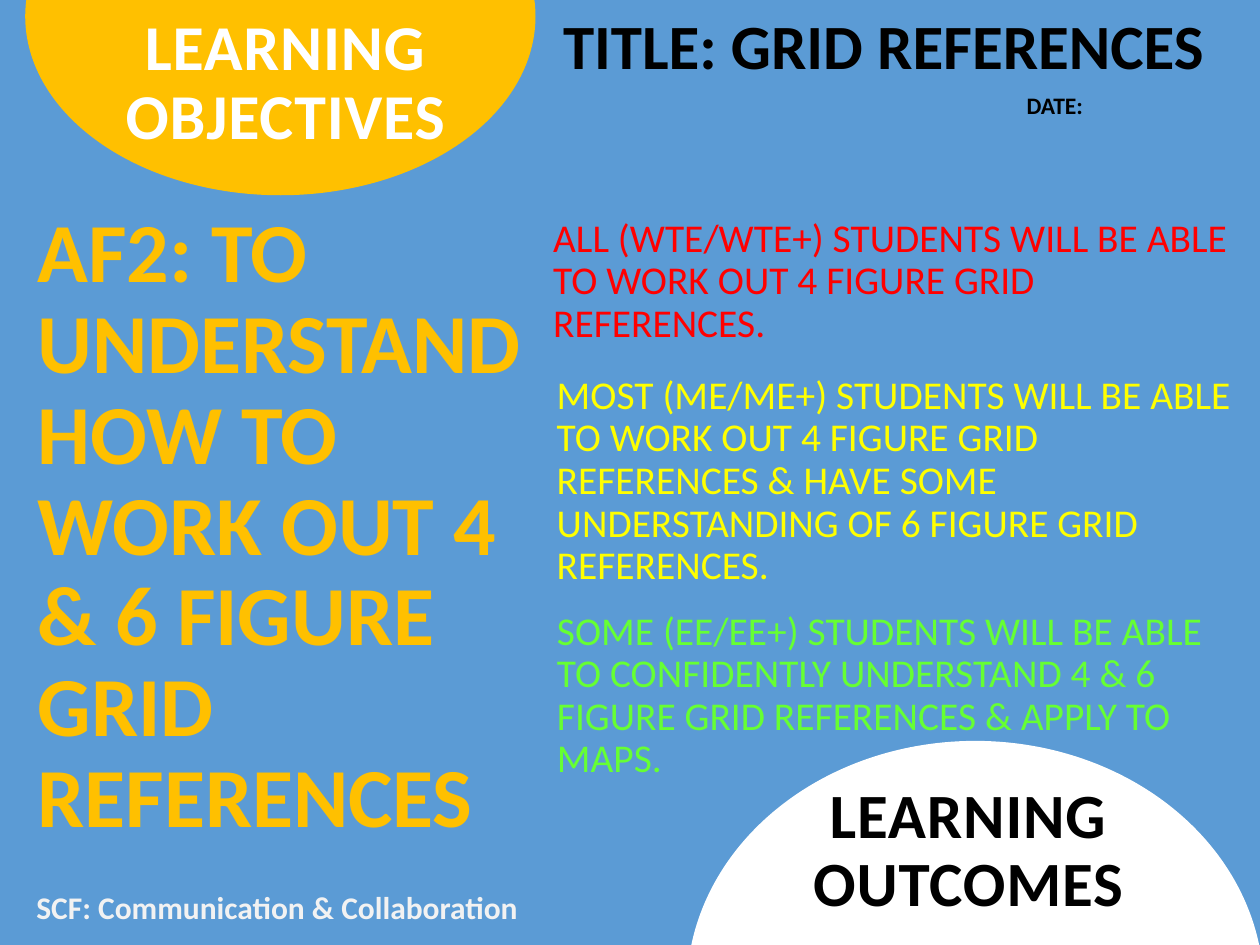
from pptx import Presentation
from pptx.dml.color import RGBColor
from pptx.enum.shapes import MSO_SHAPE as Shape
from pptx.enum.text import MSO_ANCHOR as Anchor, MSO_AUTO_SIZE as AutoSize, PP_ALIGN as Align
from pptx.util import Inches, Pt

COLOURS = {
    "sky": "5B9BD5", "gold": "FFC000", "white": "FFFFFF", "black": "000000",
    "red": "FF0000", "yellow": "FFFF00", "green": "66FF33", "pale": "F2F2F2",
}
FONT = "Calibri"
WIDTH, HEIGHT = Inches(10), Inches(7.5)
PLAIN_INSETS = (0.1, 0.05, 0.1, 0.05)
SLIM_INSETS = (0.07, 0.04, 0.07, 0.04)

HEADING = "LEARNING OBJECTIVES"
HEADING_AREA = (5.9, -4.53, 33.5, 21.47)
OVALS = [
    ("gold", (2, -17.2, 40.5, 37.87)),
    ("white", (54.5, 78.4, 45.8, 52.53)),
]
OBJECTIVE = (
    "AF2: TO UNDERSTAND HOW TO WORK OUT 4 & 6 FIGURE GRID REFERENCES",
    (2, 21.6, 41.3, 69.2),
)
OUTCOMES = [
    ("ALL (WTE/WTE+) STUDENTS WILL BE ABLE TO WORK OUT 4 FIGURE GRID REFERENCES.",
     "red", (43.2, 22.53, 56.8, 11.07), SLIM_INSETS),
    ("MOST (ME/ME+) STUDENTS WILL BE ABLE TO WORK OUT 4 FIGURE GRID REFERENCES "
     "& HAVE SOME UNDERSTANDING OF 6 FIGURE GRID REFERENCES.",
     "yellow", (43.2, 39.07, 56.8, 19.33), PLAIN_INSETS),
    ("SOME (EE/EE+) STUDENTS WILL BE ABLE TO CONFIDENTLY UNDERSTAND 4 & 6 "
     "FIGURE GRID REFERENCES & APPLY TO MAPS.",
     "green", (43.5, 64.13, 56.8, 13.2), SLIM_INSETS),
]
OUTCOMES_HEADING = ("LEARNING OUTCOMES", (58.7, 78.4, 36.3, 19.73))
LABELS = [
    ("TITLE: GRID REFERENCES", 36, "black", (43.7, 0, 60.2, 9.47)),
    ("DATE:", 13.5, "black", (80.5, 8.93, 23.4, 4.4)),
    ("SCF: Communication & Collaboration", 18, "pale", (1.9, 93.33, 56.8, 5.33)),
]


def colour(name):
    return RGBColor.from_string(COLOURS[name])


def place(area):
    sides = (WIDTH, HEIGHT, WIDTH, HEIGHT)
    return [round(side * share / 100) for side, share in zip(sides, area)]


def write(box, text, *, size, tint, bold=False, align=Align.LEFT,
          line=1.0, insets=PLAIN_INSETS, tracking=0):
    frame = box.text_frame
    frame.auto_size = AutoSize.NONE
    frame.word_wrap = True
    frame.vertical_anchor = Anchor.TOP
    frame.margin_left, frame.margin_top, frame.margin_right, frame.margin_bottom = map(Inches, insets)
    para = frame.paragraphs[0]
    para.alignment = align
    para.line_spacing = line
    para.space_before = Pt(0)
    span = para.add_run()
    span.text = text
    span.font.name = FONT
    span.font.size = Pt(size)
    span.font.bold = bold
    span.font.color.rgb = colour(tint)
    if tracking:
        span.font._element.set("spc", str(round(tracking * 100)))


def add_text(page, text, area, **style):
    write(page.shapes.add_textbox(*place(area)), text, **style)


def add_oval(page, tint, area):
    oval = page.shapes.add_shape(Shape.OVAL, *place(area))
    oval.shadow.inherit = False
    oval.fill.solid()
    oval.fill.fore_color.rgb = colour(tint)
    oval.line.fill.background()


def main():
    deck = Presentation()
    deck.slide_width, deck.slide_height = WIDTH, HEIGHT
    page = deck.slides.add_slide(deck.slide_layouts[5])
    page.background.fill.solid()
    page.background.fill.fore_color.rgb = colour("sky")

    text, area = OBJECTIVE
    add_text(page, text, area, size=48, tint="gold", bold=True, line=0.9)
    for text, tint, area, insets in OUTCOMES:
        add_text(page, text, area, size=22.5, tint=tint, line=0.9, insets=insets)
    for tint, area in OVALS:
        add_oval(page, tint, area)

    title = page.shapes.title
    title.left, title.top, title.width, title.height = place(HEADING_AREA)
    write(title, HEADING, size=36.5, tint="white", bold=True, align=Align.CENTER,
          line=0.9, insets=(0.16, 0.46, 0.16, 0.05), tracking=0.5)
    page.shapes._spTree.append(title._element)

    text, area = OUTCOMES_HEADING
    add_text(page, text, area, size=36, tint="black", bold=True, align=Align.CENTER,
             line=0.9, insets=(0.12, 0.34, 0.12, 0.04), tracking=0.5)
    for text, size, tint, area in LABELS:
        add_text(page, text, area, size=size, tint=tint, bold=True)
    deck.save("out.pptx")


if __name__ == "__main__":
    main()
